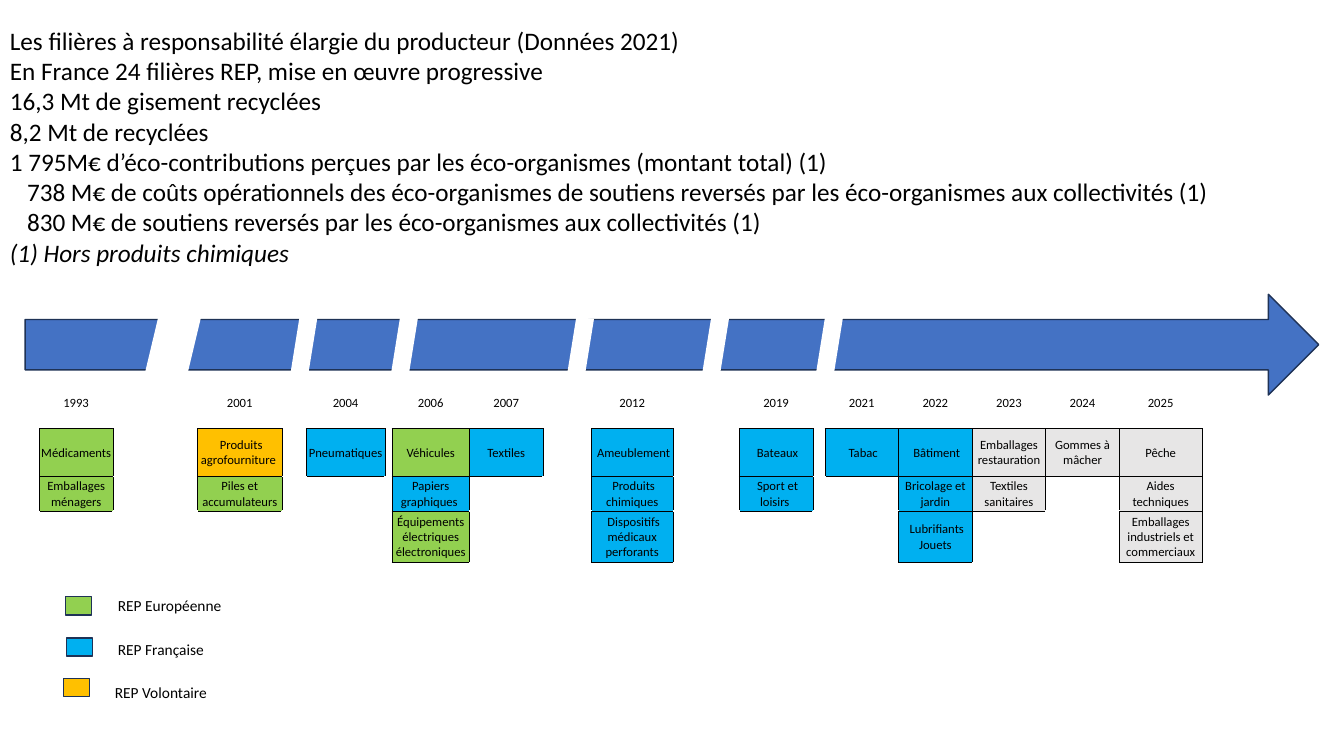
import lxml.etree
import pptx
import pptx.dml.color
import pptx.enum.shapes
import pptx.enum.text
import pptx.oxml.ns
import pptx.util

Inches = pptx.util.Inches
Pt = pptx.util.Pt
Shape = pptx.enum.shapes.MSO_SHAPE
qn = pptx.oxml.ns.qn

COLORS = {
    "black": "000000",
    "white": "FFFFFF",
    "arrow": "4472C4",
    "outline": "1E3256",
    "european": "92D050",
    "french": "00B0F0",
    "voluntary": "FFC000",
    "planned": "E7E6E6",
}

HEADLINES = [
    "Les filières à responsabilité élargie du producteur (Données 2021)",
    "En France 24 filières REP, mise en œuvre progressive",
    "16,3 Mt de gisement recyclées",
    "8,2 Mt de recyclées",
    "1 795M€ d’éco-contributions perçues par les éco-organismes (montant total) (1)",
    "738 M€ de coûts opérationnels des éco-organismes de soutiens reversés par les éco-organismes aux collectivités (1)",
    "830 M€ de soutiens reversés par les éco-organismes aux collectivités (1)",
    "(1) Hors produits chimiques",
]
INDENTED_LINES = (5, 6)

YEARS = [
    (0, "1993", 0.73, [("Médicaments", "european"), ("Emballages ménagers", "european")]),
    (8, "2001", 0.84, [(" Produits agrofourniture ", "voluntary"), ("Piles et accumulateurs", "european")]),
    (11, "2004", 0.78, [("Pneumatiques", "french")]),
    (13, "2006", 0.77, [("Véhicules", "european"), ("Papiers graphiques ", "french"),
                        ("Équipements électriques électroniques", "european")]),
    (14, "2007", 0.73, [("Textiles", "french")]),
    (19, "2012", 0.81, [(" Ameublement", "french"), (" Produits chimiques", "french"),
                        (" Dispositifs médicaux perforants", "french")]),
    (26, "2019", 0.73, [(" Bateaux", "french"), (" Sport et loisirs ", "french")]),
    (28, "2021", 0.73, [(" Tabac", "french")]),
    (29, "2022", 0.73, [(" Bâtiment", "french"), ("Bricolage et jardin", "french"),
                        (" Lubrifiants\vJouets", "french")]),
    (30, "2023", 0.73, [("Emballages restauration", "planned"), ("Textiles sanitaires", "planned")]),
    (31, "2024", 0.73, [("Gommes à mâcher", "planned")]),
    (32, "2025", 0.82, [("Pêche", "planned"), ("Aides techniques", "planned"),
                        ("Emballages industriels et commerciaux", "planned")]),
]
COLUMN_COUNT = 33
GAP_WIDTH = 0.12
NARROW_GAPS = {12: 0.07, 20: 0.04}
ROW_HEIGHTS = [0.17, 0.17, 0.48, 0.34, 0.51]
FIRST_CATEGORY_ROW = 2

LEGEND = [
    ("REP Européenne", "european", 0.65, 5.92, 1.07, 5.86, 1.24),
    ("REP Française", "french", 0.66, 6.33, 1.07, 6.3, 1.06),
    ("REP Volontaire", "voluntary", 0.63, 6.73, 1.04, 6.73, 1.13),
]

ARROW_CUTS = [
    (1.44, 3.09, 0.52),
    (3.9, 3.04, 0.22),
    (5.63, 3.15, 0.22),
    (6.97, 3.14, 0.22),
    (8.11, 3.07, 0.22),
    (2.92, 2.93, 0.22),
]


class SlideBuilder:
    """Holds the style and the current slide, and draws each kind of element."""

    font_name = "Calibri"

    def __init__(self, slide):
        self.slide = slide
        self.shapes = slide.shapes

    def color(self, name):
        return pptx.dml.color.RGBColor.from_string(COLORS[name])

    def start_group(self):
        self.shapes = self.slide.shapes.add_group_shape().shapes

    def style(self, paragraph, size):
        paragraph.font.name = self.font_name
        paragraph.font.size = Pt(size)
        paragraph.font.color.rgb = self.color("black")

    def text(self, lines, left, top, width, height, size, wrap=True):
        frame = self.shapes.add_textbox(
            Inches(left), Inches(top), Inches(width), Inches(height)).text_frame
        frame.word_wrap = wrap
        frame.text = "\n".join(lines)
        for paragraph in frame.paragraphs:
            self.style(paragraph, size)
        return frame.paragraphs

    def shape(self, kind, left, top, width, height, fill, line=None, rotation=0):
        shape = self.shapes.add_shape(
            kind, Inches(left), Inches(top), Inches(width), Inches(height))
        shape.shadow.inherit = False
        shape.rotation = rotation
        shape.fill.solid()
        shape.fill.fore_color.rgb = self.color(fill)
        if line:
            shape.line.color.rgb = self.color(line)
            shape.line.width = Pt(1)
        else:
            shape.line.fill.background()

    def table(self, left, top, widths, heights):
        table = self.shapes.add_table(
            len(heights), len(widths), Inches(left), Inches(top),
            Inches(sum(widths)), Inches(sum(heights))).table
        table.first_row = False
        table.horz_banding = False
        for column, width in zip(table.columns, widths):
            column.width = Inches(width)
        for row, height in zip(table.rows, heights):
            row.height = Inches(height)
        for cell in table.iter_cells():
            cell.fill.background()
            cell.margin_left = cell.margin_top = cell.margin_right = Inches(0.01)
            cell.margin_bottom = 0
            paragraph = cell.text_frame.paragraphs[0]
            self.style(paragraph, 9)
            lxml.etree.SubElement(paragraph._p, qn("a:endParaRPr"), sz="900")
        return table

    def cell(self, cell, text, fill=None):
        cell.text = text
        cell.vertical_anchor = pptx.enum.text.MSO_ANCHOR.MIDDLE
        paragraph = cell.text_frame.paragraphs[0]
        self.style(paragraph, 9)
        paragraph.alignment = pptx.enum.text.PP_ALIGN.CENTER
        if fill:
            cell.fill.solid()
            cell.fill.fore_color.rgb = self.color(fill)

    def borders(self, cell, sides):
        properties = cell._tc.get_or_add_tcPr()
        for position, side in enumerate(side for side in "LRTB" if side in sides):
            line = lxml.etree.Element(qn("a:ln" + side), w=str(Pt(0.5)))
            fill = lxml.etree.SubElement(line, qn("a:solidFill"))
            lxml.etree.SubElement(fill, qn("a:srgbClr"), val=COLORS["black"])
            properties.insert(position, line)


def add_timeline(builder):
    widths = [NARROW_GAPS.get(index, GAP_WIDTH) for index in range(COLUMN_COUNT)]
    for column, year, width, categories in YEARS:
        widths[column] = width
    table = builder.table(0.39, 3.91, widths, ROW_HEIGHTS)
    boxes = set()
    for column, year, width, categories in YEARS:
        builder.cell(table.cell(0, column), year)
        for row, (name, fill) in enumerate(categories, FIRST_CATEGORY_ROW):
            builder.cell(table.cell(row, column), name, fill)
            boxes.add((row, column))
    neighbours = {"L": (0, -1), "R": (0, 1), "T": (-1, 0), "B": (1, 0)}
    for row in range(len(ROW_HEIGHTS)):
        for column in range(COLUMN_COUNT):
            sides = [side for side, (down, across) in neighbours.items()
                     if (row, column) in boxes or (row + down, column + across) in boxes]
            builder.borders(table.cell(row, column), sides)


def main():
    presentation = pptx.Presentation()
    presentation.slide_width = Inches(13.33)
    presentation.slide_height = Inches(7.5)
    builder = SlideBuilder(presentation.slides.add_slide(presentation.slide_layouts[6]))

    headlines = builder.text(HEADLINES, 0, 0.2, 12.83, 2.52, 18)
    for index in INDENTED_LINES:
        headlines[index]._p.get_or_add_pPr().set("marL", str(Inches(0.17)))
    headlines[-1].font.italic = True

    add_timeline(builder)

    builder.start_group()
    for name, fill, left, top, text_left, text_top, text_width in LEGEND:
        builder.shape(Shape.RECTANGLE, left, top, 0.26, 0.18, fill, "outline")
        builder.text([name], text_left, text_top, text_width, 0.29, 11, wrap=False)

    builder.start_group()
    builder.shape(Shape.RIGHT_ARROW, 0.25, 2.92, 12.83, 1, "arrow", "outline")
    for left, top, width in ARROW_CUTS:
        builder.shape(Shape.FLOWCHART_DATA, left, top, width, 0.8, "white", rotation=6)

    presentation.save("out.pptx")


if __name__ == "__main__":
    main()
